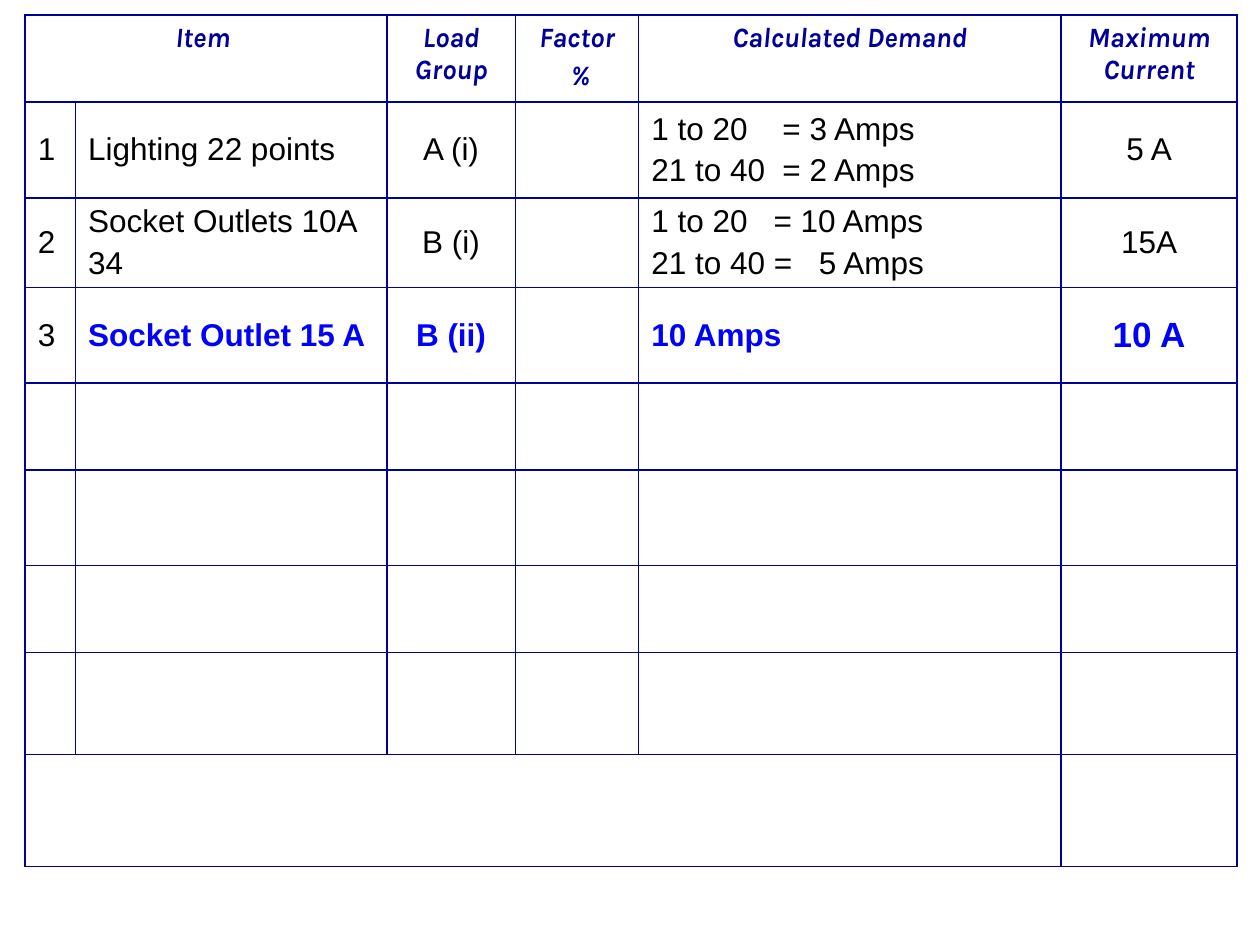
import pptx
import pptx.dml.color
import pptx.enum.text
import pptx.oxml.ns
import pptx.util
from lxml import etree
from pptx.util import Inches

NAVY = pptx.dml.color.RGBColor(0x00, 0x00, 0x99)
BORDER = pptx.dml.color.RGBColor(0x01, 0x01, 0x99)
BLACK = pptx.dml.color.RGBColor(0x00, 0x00, 0x00)
BLUE = pptx.dml.color.RGBColor(0x00, 0x00, 0xFF)

COLUMN_WIDTHS = [0.4, 2.47, 1.02, 0.98, 3.35, 1.4]
ROW_HEIGHTS = [0.69, 0.76, 0.69, 0.76, 0.69, 0.76, 0.69, 0.81, 0.89]
HEADERS = {
    0: "Item ",
    2: "Load Group",
    3: "Factor\n %",
    4: "Calculated Demand",
    5: "Maximum Current",
}
LOADS = [
    ["1", "Lighting 22 points", "A (i)", "", "1 to 20\t= 3 Amps\n21 to 40\t= 2 Amps", "5 A"],
    ["2", "Socket Outlets 10A\n34", "B (i)", "", "1 to 20\t= 10 Amps\n21 to 40 =\t5 Amps", "15A"],
    ["3", "Socket Outlet 15 A", "B (ii)", "", "10 Amps", "10 A"],
]
DEMAND_TABS = {1: [1.04], 2: [0.97, 1.33]}
DEMAND_COLUMN = 4
CENTERED_COLUMNS = (2, 5)
NEW_LOAD_ROW = 3


def add_child(parent, tag, **attributes):
    """Append a DrawingML element to its parent and return it."""
    return etree.SubElement(parent, pptx.oxml.ns.qn(tag), **attributes)


def style_cell(cell):
    """Give a cell thin borders on every side and no fill."""
    properties = cell._tc.get_or_add_tcPr()
    for side in ("a:lnL", "a:lnR", "a:lnT", "a:lnB"):
        line = add_child(properties, side, w=str(pptx.util.Pt(1)))
        fill = add_child(line, "a:solidFill")
        add_child(fill, "a:srgbClr", val=str(BORDER))
    cell.fill.background()


def set_tabs(paragraph, positions):
    """Set left tab stops, given in inches, on a paragraph."""
    tab_list = add_child(paragraph._p.get_or_add_pPr(), "a:tabLst")
    for position in positions:
        add_child(tab_list, "a:tab", pos=str(Inches(position)), algn="l")


def write_cell(cell, text, size=18, font="Arial", color=BLACK, bold=False,
               italic=False, centered=False, middle=True, tabs=()):
    """Write formatted text in a cell, one paragraph per line."""
    cell.text = text
    if middle:
        cell.vertical_anchor = pptx.enum.text.MSO_ANCHOR.MIDDLE
    for paragraph in cell.text_frame.paragraphs:
        paragraph.space_before = pptx.util.Pt(0.2 * size)
        if centered:
            paragraph.alignment = pptx.enum.text.PP_ALIGN.CENTER
        if tabs:
            set_tabs(paragraph, tabs)
        for run in paragraph.runs:
            run.font.size = pptx.util.Pt(size)
            run.font.name = font
            run.font.color.rgb = color
            run.font.bold = bold
            run.font.italic = italic


def add_demand_table(slide):
    """Add the empty bordered grid with its merged cells."""
    frame = slide.shapes.add_table(
        len(ROW_HEIGHTS), len(COLUMN_WIDTHS),
        Inches(0.2), Inches(0.12),
        Inches(sum(COLUMN_WIDTHS)), Inches(sum(ROW_HEIGHTS)))
    table = frame.table
    table.first_row = False
    table.horz_banding = False
    for column, width in zip(table.columns, COLUMN_WIDTHS):
        column.width = Inches(width)
    for row, height in zip(table.rows, ROW_HEIGHTS):
        row.height = Inches(height)
    for cell in table.iter_cells():
        style_cell(cell)
    last_row = len(ROW_HEIGHTS) - 1
    table.cell(0, 0).merge(table.cell(0, 1))
    table.cell(last_row, 0).merge(table.cell(last_row, DEMAND_COLUMN))
    return table


def fill_headers(table):
    """Write the column headings."""
    for column, text in HEADERS.items():
        write_cell(table.cell(0, column), text, size=16, font="Karla", color=NAVY,
                   bold=True, italic=True, centered=True, middle=False)


def fill_loads(table):
    """Write the load rows, highlighting the newly added one."""
    for row, texts in enumerate(LOADS, start=1):
        for column, text in enumerate(texts):
            if not text:
                continue
            highlighted = row == NEW_LOAD_ROW and column > 0
            write_cell(
                table.cell(row, column), text,
                size=20 if highlighted and column == 5 else 18,
                color=BLUE if highlighted else BLACK,
                bold=highlighted,
                centered=column in CENTERED_COLUMNS,
                tabs=DEMAND_TABS.get(row, ()) if column == DEMAND_COLUMN else ())


def main():
    """Build the maximum demand slide and save it."""
    presentation = pptx.Presentation()
    presentation.slide_width = Inches(10)
    presentation.slide_height = Inches(7.5)
    slide = presentation.slides.add_slide(presentation.slide_layouts[6])
    table = add_demand_table(slide)
    fill_headers(table)
    fill_loads(table)
    presentation.save("out.pptx")


if __name__ == "__main__":
    main()
